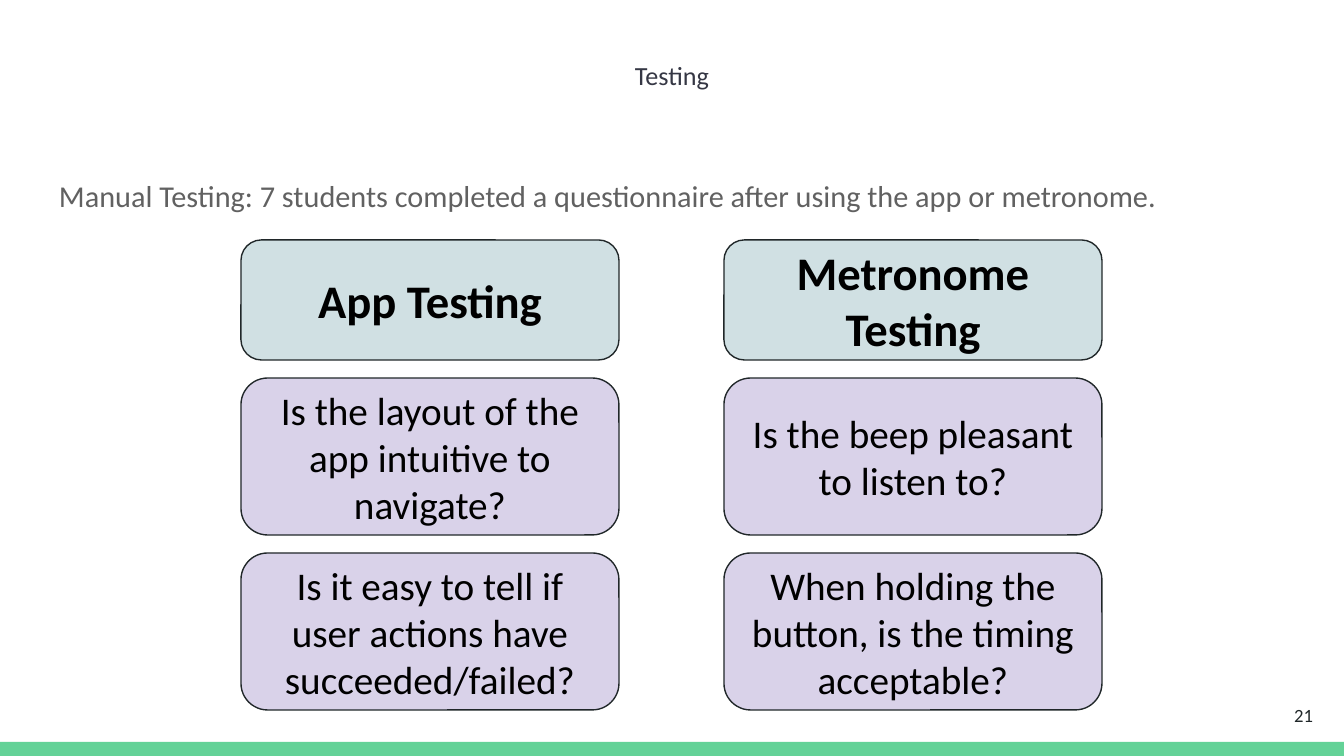
import pptx
import pptx.util
import pptx.dml.color
import pptx.enum.shapes
import pptx.enum.text

PX = 914400 / 134.4
WIDTH, HEIGHT = 1344, 756
INSET = 13
ALIGN = pptx.enum.text.PP_ALIGN
ANCHOR = pptx.enum.text.MSO_ANCHOR
SHAPE = pptx.enum.shapes.MSO_SHAPE

TITLE = "Testing"
INTRO = "Manual Testing: 7 students completed a questionnaire after using the app or metronome."
PAGE_NUMBER = "21"
COLUMNS = [
    ("App Testing",
     "Is the layout of the app intuitive to navigate?",
     "Is it easy to tell if user actions have succeeded/failed?"),
    ("Metronome Testing",
     "Is the beep pleasant to listen to?",
     "When holding the button, is the timing acceptable?"),
]
HEADING = {"height": 120, "fill": "D0E0E3", "size": 25, "bold": True}
QUESTION = {"height": 157, "fill": "D9D2E9", "size": 21, "bold": False}
ROWS = [HEADING, QUESTION, QUESTION]
CARD_LEFT, CARD_TOP, CARD_WIDTH = 241, 240, 378
COLUMN_STEP, ROW_GAP = 483, 18


def px(value):
    return pptx.util.Emu(round(value * PX))


def color(value):
    return pptx.dml.color.RGBColor.from_string(value)


def write(box, text, size, ink="000000", bold=False, align=ALIGN.CENTER,
          anchor=ANCHOR.MIDDLE, inset=INSET, spacing=None, after=0):
    frame = box.text_frame
    frame.word_wrap = True
    frame.vertical_anchor = anchor
    frame.margin_left = frame.margin_right = px(inset)
    frame.margin_top = frame.margin_bottom = px(inset)
    para = frame.paragraphs[0]
    para.alignment = align
    para.space_after = pptx.util.Pt(after)
    if spacing:
        para.line_spacing = spacing
    span = para.add_run()
    span.text = text
    span.font.name = "Calibri"
    span.font.size = pptx.util.Pt(size)
    span.font.bold = bold
    span.font.color.rgb = color(ink)


def add_shape(page, kind, bounds, fill, line=None):
    box = page.shapes.add_shape(kind, *map(px, bounds))
    box.shadow.inherit = False
    box.fill.solid()
    box.fill.fore_color.rgb = color(fill)
    if line:
        box.line.color.rgb = color(line)
        box.line.width = pptx.util.Pt(0.75)
    else:
        box.line.fill.background()
    return box


def add_text(page, bounds, text, **style):
    write(page.shapes.add_textbox(*map(px, bounds)), text, **style)


def main():
    deck = pptx.Presentation()
    deck.slide_width, deck.slide_height = px(WIDTH), px(HEIGHT)
    page = deck.slides.add_slide(deck.slide_layouts[6])

    add_shape(page, SHAPE.RECTANGLE, (0, 742, WIDTH, 14), "63D297")
    add_text(page, (507, 52, 330, 90), TITLE, size=14, ink="353744",
             anchor=ANCHOR.TOP, inset=7)
    add_text(page, (46, 159, 1236, 74), INTRO, size=16.2, ink="616161",
             align=ALIGN.LEFT, anchor=ANCHOR.TOP, spacing=1.15, after=12)

    for column, texts in enumerate(COLUMNS):
        left, top = CARD_LEFT + column * COLUMN_STEP, CARD_TOP
        for text, row in zip(texts, ROWS):
            card = add_shape(page, SHAPE.ROUNDED_RECTANGLE,
                             (left, top, CARD_WIDTH, row["height"]),
                             row["fill"], line="202729")
            card.adjustments[0] = 0.17
            write(card, text, size=row["size"], bold=row["bold"])
            top += row["height"] + ROW_GAP

    add_text(page, (1246, 686, 80, 58), PAGE_NUMBER, size=10, ink="202729",
             align=ALIGN.RIGHT)
    deck.save("out.pptx")


if __name__ == "__main__":
    main()
